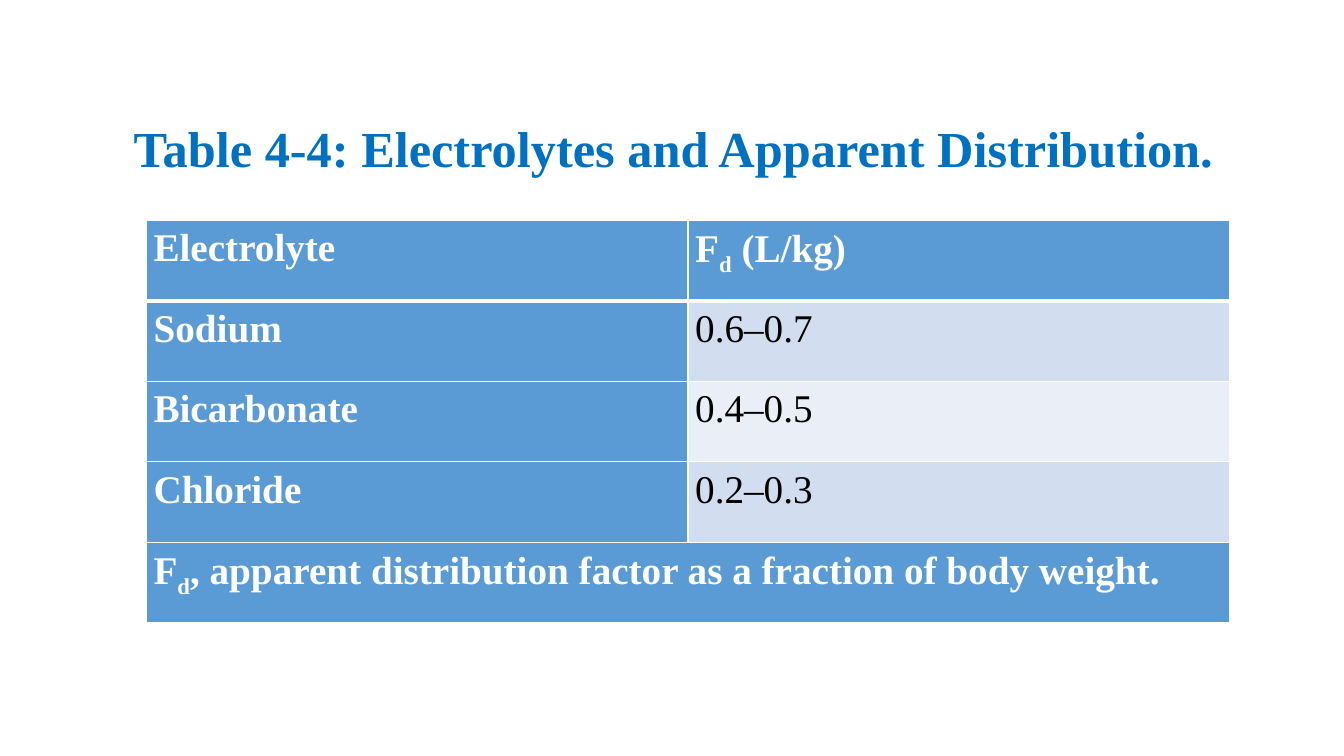
from lxml.etree import SubElement
from pptx import Presentation
from pptx.dml.color import RGBColor
from pptx.enum.text import MSO_ANCHOR as Anchor, PP_ALIGN as Align
from pptx.oxml.ns import qn
from pptx.util import Cm, Pt

WHITE = RGBColor(0xFF, 0xFF, 0xFF)
BLACK = RGBColor(0x00, 0x00, 0x00)
TITLE_BLUE = RGBColor(0x00, 0x70, 0xC0)
HEAD_BLUE = RGBColor(0x5B, 0x9B, 0xD5)
BANDS = (RGBColor(0xD2, 0xDE, 0xEF), RGBColor(0xEA, 0xEF, 0xF7))

# Text between underscores is set as subscript
ROWS = [
    ("Electrolyte", "F_d_ (L/kg)"),
    ("Sodium", "0.6–0.7"),
    ("Bicarbonate", "0.4–0.5"),
    ("Chloride", "0.2–0.3"),
    ("F_d_, apparent distribution factor as a fraction of body weight.", ""),
]


def write(frame, text, size=28, color=WHITE, bold=True, align=Align.JUSTIFY):
    para = frame.paragraphs[0]
    para.alignment = align
    para.line_spacing = 1.15
    for index, part in enumerate(text.split("_")):
        span = para.add_run()
        span.text = part
        font = span.font
        font.name, font.size, font.bold = "Times New Roman", Pt(size), bold
        font.color.rgb = color
        if index % 2:
            span._r.get_or_add_rPr().set("baseline", "-25000")


class SlideBuilder:
    def __init__(self, deck):
        self.page = deck.slides.add_slide(deck.slide_layouts[6])

    def title(self, text, left, top, width, height):
        box = self.page.shapes.add_textbox(Cm(left), Cm(top), Cm(width), Cm(height))
        frame = box.text_frame
        frame.word_wrap = True
        frame.vertical_anchor = Anchor.MIDDLE
        write(frame, text, size=36, color=TITLE_BLUE, align=Align.LEFT)

    def borders(self, cell, **widths):
        properties = cell._tc.get_or_add_tcPr()
        for side in "LRTB":
            line = SubElement(properties, qn(f"a:ln{side}"), w=str(Pt(widths.get(side, 1))))
            fill = SubElement(line, qn("a:solidFill"))
            SubElement(fill, qn("a:srgbClr"), val=str(WHITE))

    def table(self, rows, left, top, column_width, row_height):
        columns = len(rows[0])
        table = self.page.shapes.add_table(
            len(rows), columns, Cm(left), Cm(top),
            Cm(column_width * columns), Cm(row_height * len(rows))).table
        for column in table.columns:
            column.width = Cm(column_width)
        last = len(rows) - 1
        table.cell(last, 0).merge(table.cell(last, columns - 1))

        for r, row in enumerate(rows):
            table.rows[r].height = Cm(row_height)
            for c, text in enumerate(row):
                cell = table.cell(r, c)
                cell.margin_left = cell.margin_right = Cm(0.18)
                cell.margin_top = cell.margin_bottom = 0
                self.borders(cell, T=3 if r == 1 else 1, B=3 if r == 0 else 1)
                is_value = c > 0 and 0 < r < last
                cell.fill.solid()
                cell.fill.fore_color.rgb = BANDS[(r - 1) % 2] if is_value else HEAD_BLUE
                if text:
                    write(cell.text_frame, text, bold=not is_value,
                          color=BLACK if is_value else WHITE)


def main():
    deck = Presentation()
    deck.slide_width, deck.slide_height = Cm(33.87), Cm(19.05)
    slide = SlideBuilder(deck)
    slide.title("Table 4-4: Electrolytes and Apparent Distribution.", 3.12, 2, 28.42, 3.2)
    slide.table(ROWS, left=3.69, top=5.55, column_width=13.65, row_height=2.03)
    deck.save("out.pptx")


if __name__ == "__main__":
    main()
